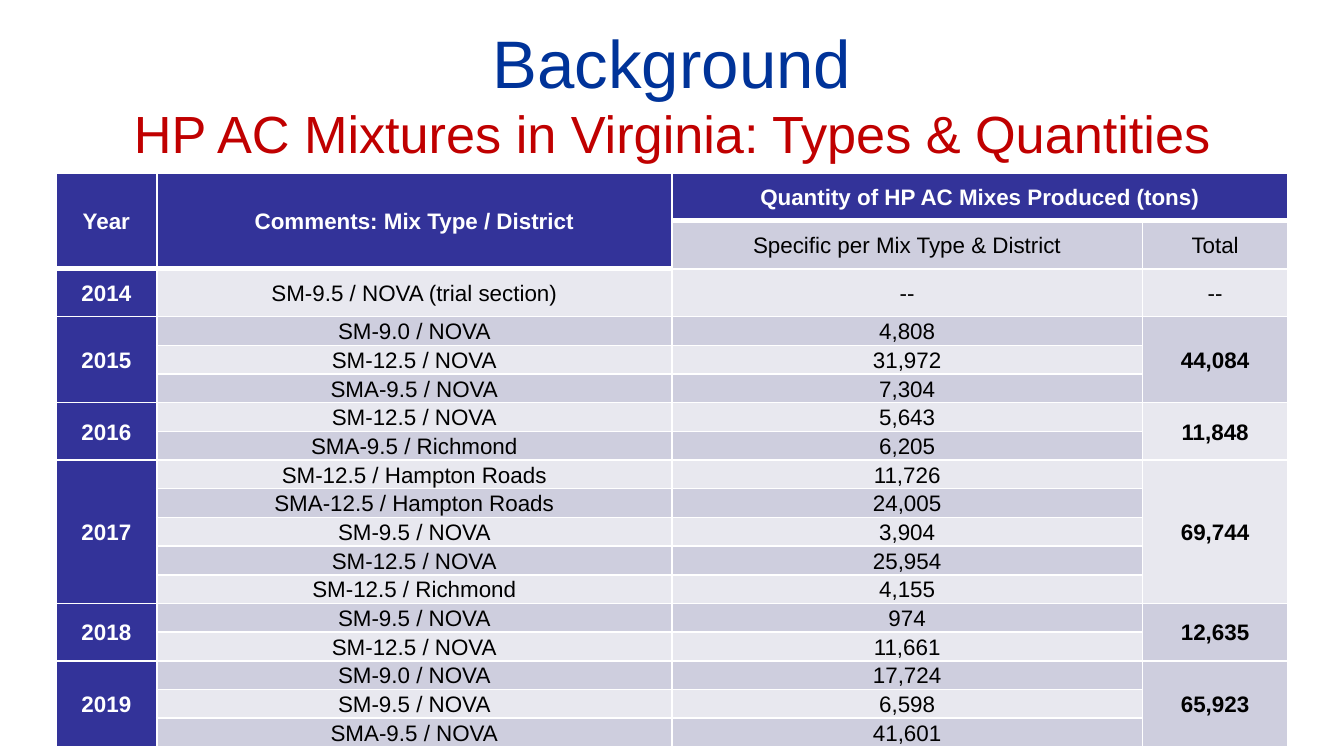
import pptx
import pptx.dml.color
import pptx.enum.text
import pptx.oxml
import pptx.oxml.ns
import pptx.util

THEME = {
    "font": "Arial", "title": 36, "subtitle": 28, "body": 12,
    "blue": "003399", "red": "C00000", "header": "333399",
    "bands": ("E8E8EF", "CECEDE"), "white": "FFFFFF", "black": "000000",
}
CENTER = pptx.enum.text.PP_ALIGN.CENTER
MIDDLE = pptx.enum.text.MSO_ANCHOR.MIDDLE
RGB = pptx.dml.color.RGBColor.from_string


def write(p, text, size=THEME["body"], color=THEME["black"], bold=False, spacing=None):
    p.alignment = CENTER
    p.line_spacing = spacing
    r = p.add_run()
    r.text = text
    r.font.name = THEME["font"]
    r.font.size = pptx.util.Pt(size)
    r.font.bold = bold
    r.font.color.rgb = RGB(color)


def border(cell, side, width):
    cell._tc.get_or_add_tcPr().append(pptx.oxml.parse_xml(
        f'<a:ln{side} {pptx.oxml.ns.nsdecls("a")} w="{pptx.util.Pt(width)}">'
        f'<a:solidFill><a:srgbClr val="{THEME["white"]}"/></a:solidFill></a:ln{side}>'))


prs = pptx.Presentation()
prs.slide_width = pptx.util.Inches(10)
prs.slide_height = prs.slide_width * 9 // 16
col = prs.slide_width / 120
row = prs.slide_height * 0.038
s = prs.slides.add_slide(prs.slide_layouts[6])

groups = [
    ("2014", "--", [("SM-9.5 / NOVA (trial section)", "--")]),
    ("2015", "44,084", [("SM-9.0 / NOVA", "4,808"), ("SM-12.5 / NOVA", "31,972"),
                        ("SMA-9.5 / NOVA", "7,304")]),
    ("2016", "11,848", [("SM-12.5 / NOVA", "5,643"), ("SMA-9.5 / Richmond", "6,205")]),
    ("2017", "69,744", [("SM-12.5 / Hampton Roads", "11,726"),
                        ("SMA-12.5 / Hampton Roads", "24,005"),
                        ("SM-9.5 / NOVA", "3,904"), ("SM-12.5 / NOVA", "25,954"),
                        ("SM-12.5 / Richmond", "4,155")]),
    ("2018", "12,635", [("SM-9.5 / NOVA", "974"), ("SM-12.5 / NOVA", "11,661")]),
    ("2019", "65,923", [("SM-9.0 / NOVA", "17,724"), ("SM-9.5 / NOVA", "6,598"),
                        ("SMA-9.5 / NOVA", "41,601")]),
]
rows = [
    ("Year", "Comments: Mix Type / District", "Quantity of HP AC Mixes Produced (tons)", ""),
    ("", "", "Specific per Mix Type & District", "Total"),
]
merges = [(0, 0, 1, 0), (0, 1, 1, 1), (0, 2, 0, 3)]
for year, total, mixes in groups:
    first, last = len(rows), len(rows) + len(mixes) - 1
    for i, (mix, tons) in enumerate(mixes):
        rows.append((year if i == 0 else "", mix, tons, total if i == 0 else ""))
    if last > first:
        merges += [(first, 0, last, 0), (first, 3, last, 3)]

widths = [9, 46, 42, 13]
table = s.shapes.add_table(
    len(rows), len(widths), int(5 * col), int(0.229 * prs.slide_height),
    int(sum(widths) * col), int(20 * row)).table
for c, width in enumerate(widths):
    table.columns[c].width = int(width * col)
for r, values in enumerate(rows):
    table.rows[r].height = int(row * (5 / 3 if r < 3 else 1))
    for c, text in enumerate(values):
        cell = table.cell(r, c)
        header = r == 0 or c == 0 or (r == 1 and c == 1)
        heavy = r == 0 or (r == 1 and c < 2)
        for side in "LRTB":
            border(cell, side, 3 if side == "B" and heavy else 1)
        cell.fill.solid()
        cell.fill.fore_color.rgb = RGB(THEME["header"] if header else THEME["bands"][r % 2])
        cell.vertical_anchor = MIDDLE
        cell.margin_left = cell.margin_right = pptx.util.Inches(0.07)
        cell.margin_top = cell.margin_bottom = 0
        if text:
            write(cell.text_frame.paragraphs[0], text, spacing=1.07,
                  color=THEME["white" if header else "black"],
                  bold=header or (c == 3 and r > 2))
for top, left, bottom, right in merges:
    table.cell(top, left).merge(table.cell(bottom, right))

tf = s.shapes.add_textbox(
    int(6 * col), int(0.039 * prs.slide_height),
    int(108 * col), int(0.167 * prs.slide_height)).text_frame
tf.word_wrap = True
tf.vertical_anchor = MIDDLE
p = tf.paragraphs[0]
write(p, "Background", size=THEME["title"], color=THEME["blue"])
p.add_line_break()
write(p, "HP AC Mixtures in Virginia: Types & Quantities",
      size=THEME["subtitle"], color=THEME["red"])

prs.save("out.pptx")
